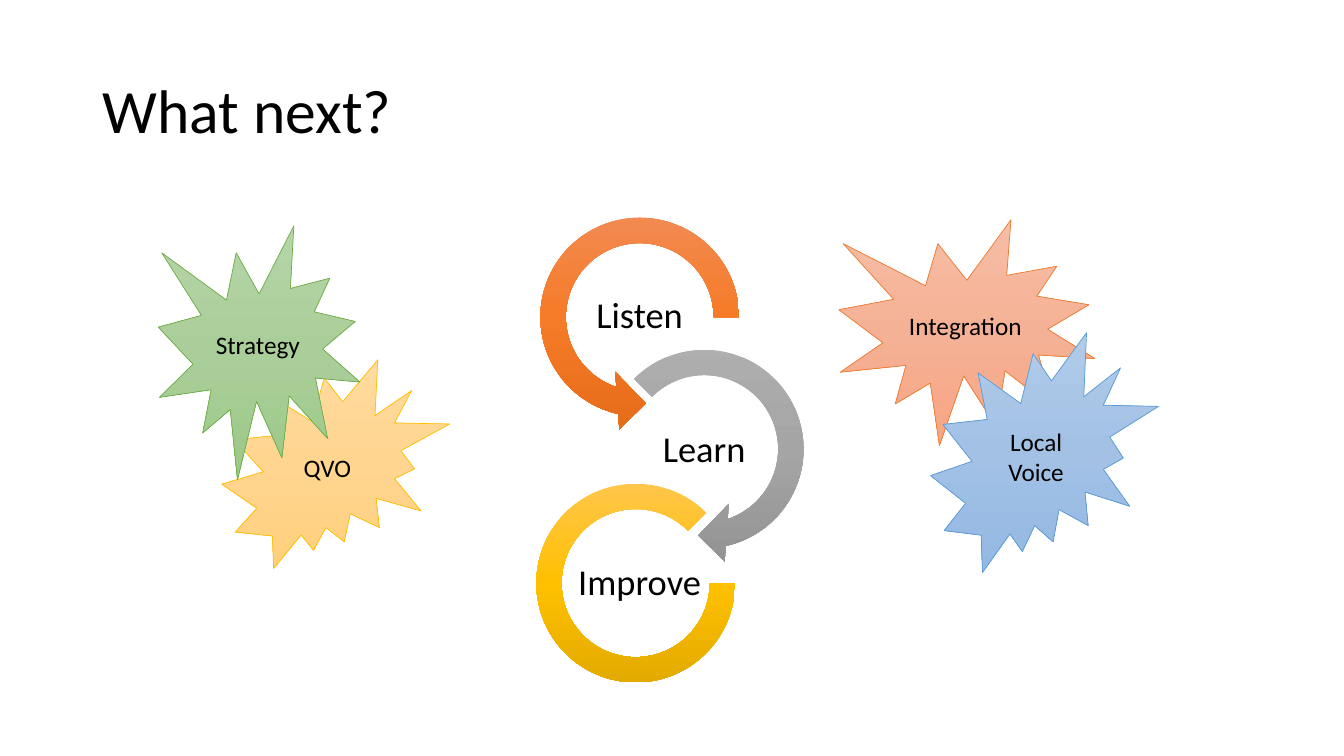
from copy import deepcopy
from dataclasses import dataclass

from pptx import Presentation
from pptx.dml.color import RGBColor
from pptx.enum.shapes import MSO_SHAPE
from pptx.enum.text import MSO_ANCHOR, MSO_AUTO_SIZE, PP_ALIGN
from pptx.oxml.ns import qn
from pptx.util import Emu, Pt

PX = 9144  # 100 px to the inch


@dataclass(frozen=True)
class Theme:
    font: str = "Calibri"
    text: str = "000000"
    title_size: int = 44
    step_size: int = 26
    seal_size: int = 18
    orange: tuple = ("F18C57", "F67B28", "E56C19")
    gray: tuple = ("AFAFAF", "A5A5A5", "939393")
    gold: tuple = ("FFC64B", "FFC000", "E3AB00")
    pale_gold: tuple = ("FFDB9E", "FFD590", "FFD07C")
    pale_green: tuple = ("B5D5A7", "AACE9A", "9CC987")
    pale_orange: tuple = ("F7BDA5", "F5B196", "F8A582")
    pale_blue: tuple = ("B1CBE9", "A3C1E5", "93B9E4")
    gold_edge: str = "FFC000"
    green_edge: str = "70AD47"
    orange_edge: str = "ED7D31"
    blue_edge: str = "5B9BD5"


THEME = Theme()


@dataclass(frozen=True)
class Step:
    label: str
    label_at: tuple[int, int]
    kind: MSO_SHAPE
    box: tuple[int, int, int, int]
    adjustments: tuple
    colors: tuple


@dataclass(frozen=True)
class Seal:
    label: str
    kind: MSO_SHAPE
    box: tuple[int, int, int, int]
    colors: tuple
    edge: str


STEPS = [
    Step("Listen", (571, 282), MSO_SHAPE.LEFT_CIRCULAR_ARROW, (520, 200, 229, 229),
         (0.11, 11.42, 63, 0, 0.125), THEME.orange),
    Step("Learn", (635, 415), MSO_SHAPE.CIRCULAR_ARROW, (584, 331, 229, 229),
         (0.11, 11.42, 45, 135, 0.125), THEME.gray),
    Step("Improve", (571, 547), MSO_SHAPE.BLOCK_ARC, (532, 480, 197, 197),
         (0, 189, 0.127), THEME.gold),
]
SEALS = [
    Seal("QVO", MSO_SHAPE.EXPLOSION2, (220, 357, 226, 207),
         THEME.pale_gold, THEME.gold_edge),
    Seal("Strategy", MSO_SHAPE.EXPLOSION1, (157, 224, 200, 252),
         THEME.pale_green, THEME.green_edge),
    Seal("Integration", MSO_SHAPE.EXPLOSION1, (832, 218, 254, 224),
         THEME.pale_orange, THEME.orange_edge),
    Seal("Local Voice", MSO_SHAPE.EXPLOSION2, (923, 330, 226, 238),
         THEME.pale_blue, THEME.blue_edge),
]


def scaled(*lengths: int) -> list[Emu]:
    return [Emu(length * PX) for length in lengths]


def write(frame, text: str, *, size: int, align=PP_ALIGN.CENTER,
          spacing: float = 1.0, inset: int | None = None) -> None:
    frame.word_wrap = True
    frame.auto_size = MSO_AUTO_SIZE.NONE
    frame.vertical_anchor = MSO_ANCHOR.MIDDLE
    if inset is not None:
        frame.margin_left = frame.margin_right = Emu(inset * PX)
        frame.margin_top = frame.margin_bottom = Emu(inset * PX)
    para = frame.paragraphs[0]
    para.alignment = align
    para.line_spacing = spacing
    span = para.add_run()
    span.text = text
    span.font.name = THEME.font
    span.font.size = Pt(size)
    span.font.color.rgb = RGBColor.from_string(THEME.text)


def add_gradient_shape(page, kind: MSO_SHAPE, box: tuple, colors: tuple):
    shape = page.shapes.add_shape(kind, *scaled(*box))
    shape.shadow.inherit = False
    shape.line.fill.background()
    shape.fill.gradient()
    shape.fill.gradient_angle = 270  # top to bottom
    # A new gradient has two stops; add the middle one
    stop_list = shape.element.find(".//" + qn("a:gsLst"))
    stop_list.append(deepcopy(stop_list[-1]))
    for index, (stop, color) in enumerate(zip(shape.fill.gradient_stops, colors)):
        stop.position = index / 2
        stop.color.rgb = RGBColor.from_string(color)
    return shape


def add_step(page, step: Step) -> None:
    arc = add_gradient_shape(page, step.kind, step.box, step.colors)
    for index, value in enumerate(step.adjustments):
        arc.adjustments[index] = value
    label = page.shapes.add_textbox(*scaled(*step.label_at, 127, 64))
    write(label.text_frame, step.label, size=THEME.step_size, spacing=0.9, inset=2)


def add_seal(page, seal: Seal) -> None:
    shape = add_gradient_shape(page, seal.kind, seal.box, seal.colors)
    shape.line.color.rgb = RGBColor.from_string(seal.edge)
    shape.line.width = Pt(0.5)
    write(shape.text_frame, seal.label, size=THEME.seal_size)


def main() -> None:
    deck = Presentation()
    deck.slide_width, deck.slide_height = scaled(1333, 750)
    page = deck.slides.add_slide(deck.slide_layouts[5])

    # Title
    title = page.shapes.title
    title.left, title.top, title.width, title.height = scaled(92, 40, 1150, 145)
    write(title.text_frame, "What next?", size=THEME.title_size,
          align=PP_ALIGN.LEFT, spacing=0.9)

    # Chain of steps in the middle
    for step in STEPS:
        add_step(page, step)

    # Topic bursts on both sides
    for seal in SEALS:
        add_seal(page, seal)

    deck.save("out.pptx")


if __name__ == "__main__":
    main()
